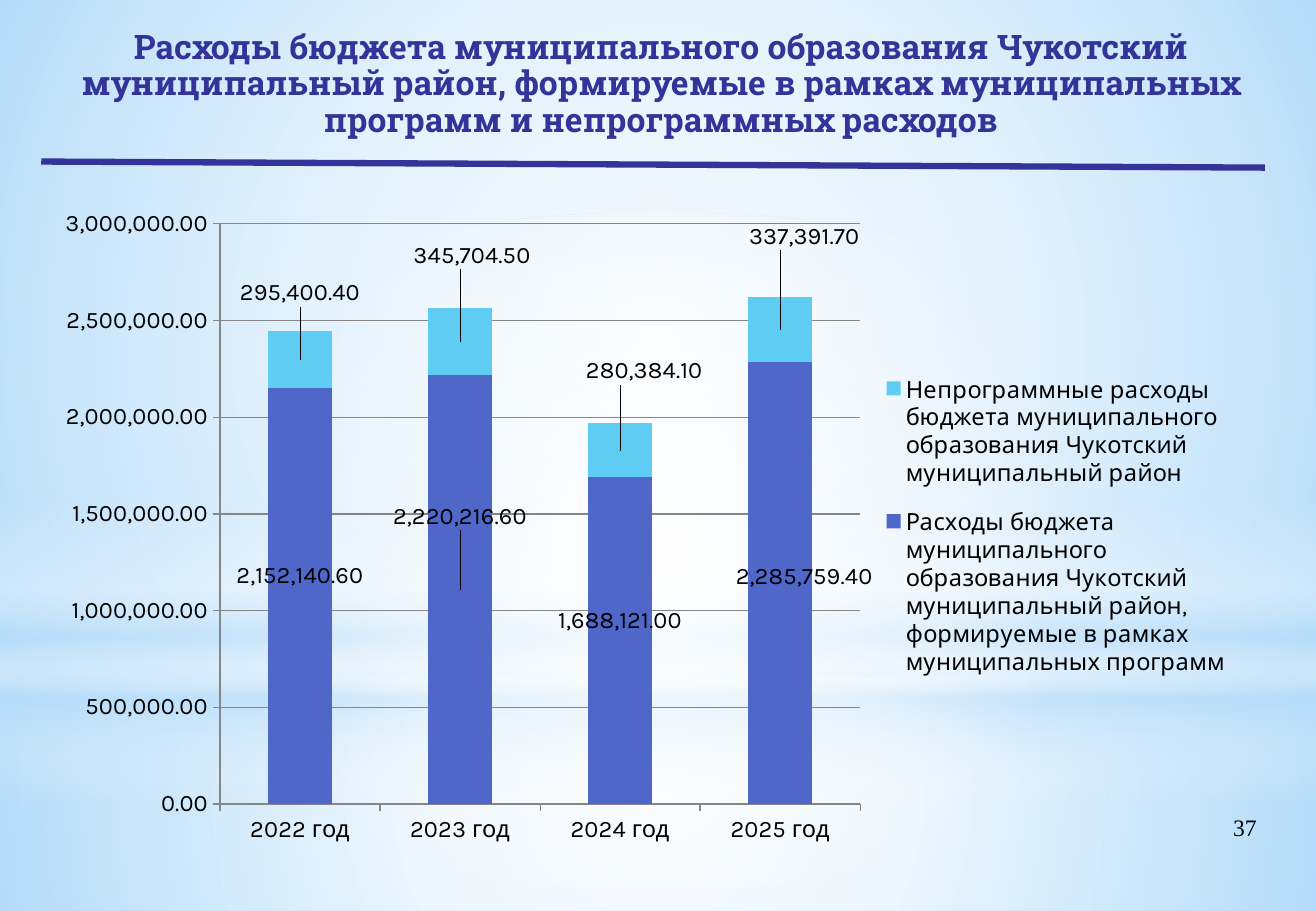
"""Build the slide on district budget spending by year."""
import pptx
import pptx.chart.data
import pptx.dml.color
import pptx.enum.chart
import pptx.enum.shapes
import pptx.enum.text
import pptx.oxml
import pptx.oxml.ns
import pptx.util

Inches, Pt = pptx.util.Inches, pptx.util.Pt
Align, Anchor = pptx.enum.text.PP_ALIGN, pptx.enum.text.MSO_ANCHOR
Kind, Mark = pptx.enum.shapes.MSO_SHAPE, pptx.enum.chart.XL_TICK_MARK

HUES = {"sky": "B4DCFA", "white": "FFFFFF", "navy": "333399", "black": "000000",
        "blue": "4E67C8", "cyan": "5ECCF3", "gray": "868686"}
TITLE = ("Расходы бюджета муниципального образования Чукотский муниципальный район, "
         "формируемые в рамках муниципальных программ и непрограммных расходов")
PAGE = "37"
YEARS = ["2022 год", "2023 год", "2024 год", "2025 год"]
SERIES = [
    {"name": "Расходы бюджета муниципального образования Чукотский муниципальный район, "
             "формируемые в рамках муниципальных программ",
     "vals": [2152140.6, 2220216.6, 1688121, 2285759.4], "hue": "blue",
     "shifts": [(0, -0.03), (0, -0.11), (0, -0.03), (0.02, -0.01)]},
    {"name": "Непрограммные расходы бюджета муниципального образования "
             "Чукотский муниципальный район",
     "vals": [295400.4, 345704.5, 280384.1, 337391.7], "hue": "cyan",
     "shifts": [(0, -0.1), (0.01, -0.13), (0.02, -0.12), (0.02, -0.14)]},
]
GLOWS = [
    (Kind.RECTANGLE, (0, 5.58, 10.84, 1.92), "round",
     [(0, "white", 91), (37, "white", 76), (100, "sky", 79)]),
    (Kind.RECTANGLE, (0, 0, 10.84, 5.58), "round",
     [(0, "white", 89), (48, "white", 62), (100, "sky", 79)]),
    (Kind.RECTANGLE, (0, 4.12, 10.84, 2.5), "down",
     [(0, "white", 0), (29, "white", 30), (45, "sky", 40),
      (55, "white", 26), (65, "sky", 60), (100, "white", 0)]),
    (Kind.OVAL, (0, 1.75, 10.84, 5.58), "round",
     [(0, "white", 100), (56, "white", 0)]),
]
PATHS = {
    "round": '<a:path path="circle"><a:fillToRect l="50000" t="50000" r="50000" b="50000"/></a:path>',
    "down": '<a:lin ang="5400000" scaled="0"/>',
}


def color(hue):
    """Return the named colour."""
    return pptx.dml.color.RGBColor.from_string(HUES[hue])


def style(font, size, face, hue="black", bold=False):
    """Set the size, face and colour of a font."""
    font.size, font.name, font.bold = Pt(size), face, bold
    font.color.rgb = color(hue)


def node(xml):
    """Parse markup whose root tag has no namespaces declared."""
    head, rest = xml.split(">", 1)
    return pptx.oxml.parse_xml(f'{head} {pptx.oxml.ns.nsdecls("a", "c")}>{rest}')


def add_glow(slide, kind, box, path, stops):
    """Add a shape with a clear gradient fill."""
    shape = slide.shapes.add_shape(kind, *map(Inches, box))
    shape.shadow.inherit = False
    shape.line.fill.background()
    marks = "".join(
        f'<a:gs pos="{spot * 1000}"><a:srgbClr val="{HUES[hue]}">'
        f'<a:alpha val="{alpha * 1000}"/></a:srgbClr></a:gs>'
        for spot, hue, alpha in stops)
    fill = node(f"<a:gradFill><a:gsLst>{marks}</a:gsLst>{PATHS[path]}</a:gradFill>")
    shape.element.spPr.insert(2, fill)


def add_text(slide, text, box, align, anchor=Anchor.TOP, pads=(0, 0), space=1, **font):
    """Add a text box with one paragraph."""
    frame = slide.shapes.add_textbox(*map(Inches, box)).text_frame
    frame.word_wrap, frame.vertical_anchor = True, anchor
    frame.margin_left = frame.margin_right = Inches(pads[0])
    frame.margin_top = frame.margin_bottom = Inches(pads[1])
    para = frame.paragraphs[0]
    para.alignment, para.line_spacing = align, space
    run = para.add_run()
    run.text = text
    style(run.font, **font)


def add_rule(slide, start, end):
    """Add the thick line under the title."""
    rule = slide.shapes.add_connector(
        pptx.enum.shapes.MSO_CONNECTOR.STRAIGHT, *map(Inches, start + end))
    rule.line.color.rgb, rule.line.width = color("navy"), Pt(3.75)
    rule.element.spPr.append(node("<a:effectLst></a:effectLst>"))


def place(part, index, **spots):
    """Give a chart part a manual layout."""
    for old in part.findall(pptx.oxml.ns.qn("c:layout")):
        part.remove(old)
    tags = "".join(f'<c:{tag} val="{val}"/>' for tag, val in spots.items())
    part.insert(index, node(f"<c:layout><c:manualLayout>{tags}</c:manualLayout></c:layout>"))


def add_chart(slide, box):
    """Add the stacked columns with their shifted labels."""
    data = pptx.chart.data.CategoryChartData(number_format="#,##0.00")
    data.categories = YEARS
    for row in SERIES:
        data.add_series(row["name"], row["vals"])
    chart = slide.shapes.add_chart(
        pptx.enum.chart.XL_CHART_TYPE.COLUMN_STACKED, *map(Inches, box), data).chart
    style(chart.font, 18, "Karla")
    chart.has_title = False
    chart.has_legend = True
    chart.legend.position = pptx.enum.chart.XL_LEGEND_POSITION.RIGHT
    chart.legend.include_in_layout = False
    style(chart.legend.font, 14, "Karla")
    plot = chart.plots[0]
    plot.gap_width, plot.overlap, plot.vary_by_categories = 150, 100, False

    for axis in (chart.category_axis, chart.value_axis):
        style(axis.tick_labels.font, 14, "Karla")
        axis.major_tick_mark, axis.minor_tick_mark = Mark.OUTSIDE, Mark.NONE
        axis.format.line.color.rgb = color("gray")
    scale = chart.value_axis
    scale.minimum_scale, scale.maximum_scale, scale.major_unit = 0, 3000000, 500000
    scale.tick_labels.number_format = "#,##0.00"
    scale.tick_labels.number_format_is_linked = False
    scale.major_gridlines.format.line.color.rgb = color("gray")

    for row, bars in zip(SERIES, plot.series):
        bars.format.fill.solid()
        bars.format.fill.fore_color.rgb = color(row["hue"])
        labels = bars.data_labels
        labels.show_value = True
        labels.number_format, labels.number_format_is_linked = "#,##0.00", False
        style(labels.font, 14, "Karla")
        for index in range(len(YEARS)):
            label = bars.points[index].data_label
            style(label.font, 14, "Karla")
            label.position = pptx.enum.chart.XL_LABEL_POSITION.CENTER

    shifts = [shift for row in SERIES for shift in row["shifts"]]
    for label, (across, down) in zip(chart.element.xpath(".//c:dLbl"), shifts):
        place(label, 1, x=across, y=down)
    edges = {"xMode": "edge", "yMode": "edge"}
    place(chart.element.xpath(".//c:plotArea")[0], 0,
          layoutTarget="inner", **edges, x=0.148, y=0.041, w=0.53, h=0.88)
    place(chart.element.xpath(".//c:legend")[0], 1, **edges, x=0.69, y=0.24, w=0.3, h=0.52)


def main():
    """Build and save the slide."""
    deck = pptx.Presentation()
    deck.slide_width, deck.slide_height = Inches(10.84), Inches(7.5)
    slide = deck.slides.add_slide(deck.slide_layouts[6])
    slide.background.fill.solid()
    slide.background.fill.fore_color.rgb = color("sky")
    for glow in GLOWS:
        add_glow(slide, *glow)
    add_text(slide, PAGE, (7.92, 6.64, 2.53, 0.52), Align.RIGHT, pads=(0.1, 0.05),
             size=14, face="Times New Roman")
    add_text(slide, TITLE, (0.57, 0.23, 9.75, 0.94), Align.CENTER, Anchor.MIDDLE,
             space=0.9, size=20, face="Roboto Slab", hue="navy", bold=True)
    add_rule(slide, (0.34, 1.33), (10.42, 1.38))
    add_chart(slide, (0.34, 1.62, 9.95, 5.43))
    deck.save("out.pptx")


if __name__ == "__main__":
    main()
